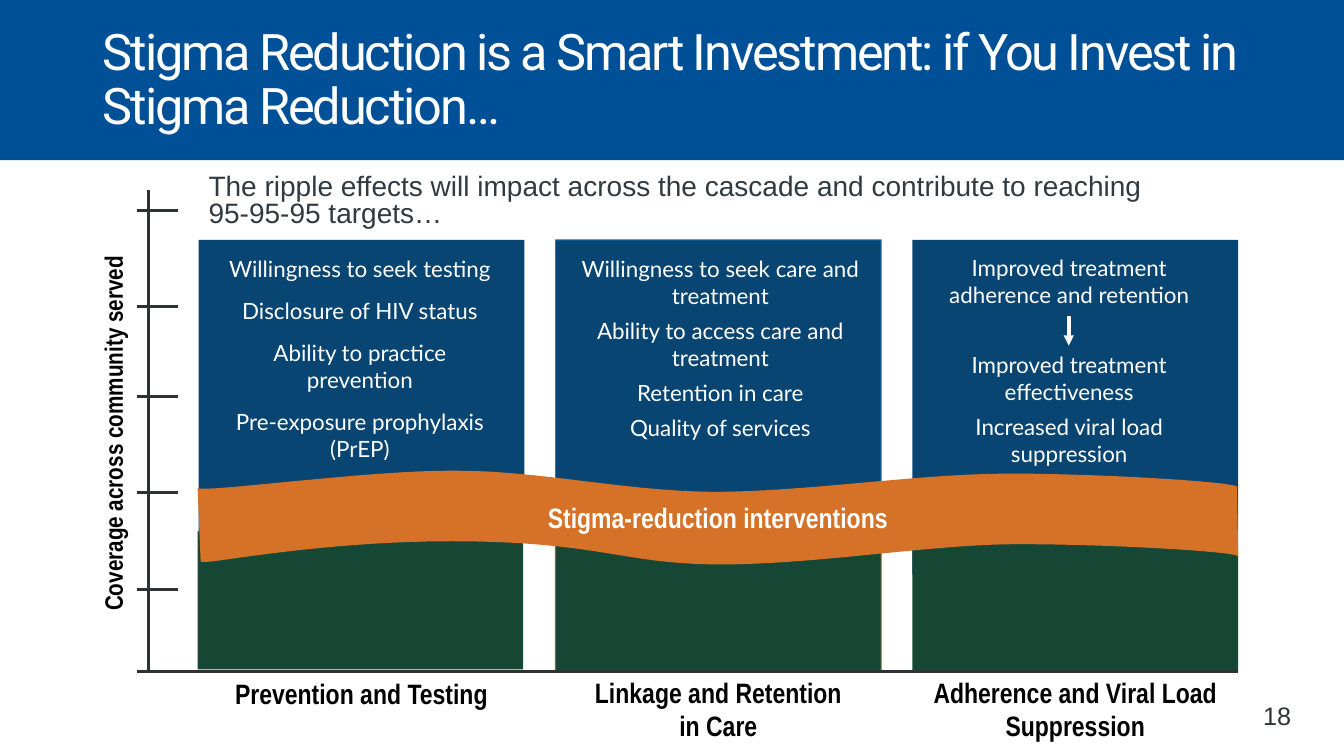
from dataclasses import dataclass

from lxml import etree
from pptx import Presentation
from pptx import util as u
from pptx.dml import color
from pptx.enum import shapes, text
from pptx.oxml import ns

PX = 9144
SLIDE_WIDTH, SLIDE_HEIGHT = 1333, 750
CURVE_STEPS = 16


@dataclass(frozen=True)
class Theme:
    banner: str = "005098"
    ink: str = "2E3235"
    subtitle: str = "313A40"
    outcome: str = "084572"
    outcome_line: str = "0E7DC2"
    base: str = "154734"
    base_line: str = "6D7331"
    wave: str = "D57228"
    white: str = "FFFFFF"
    black: str = "000000"
    heading_size: int = 36
    label_size: int = 20
    axis_size: int = 18
    body_size: int = 16


THEME = Theme()


@dataclass(frozen=True)
class Box:
    left: int
    top: int
    width: int
    height: int

    def emu(self) -> list[int]:
        return [value * PX for value in (self.left, self.top, self.width, self.height)]


@dataclass(frozen=True)
class Style:
    name: str
    size: int
    color: str
    bold: bool = False


@dataclass(frozen=True)
class Stage:
    label: str
    label_box: Box
    outcome_box: Box
    base_box: Box
    text_box: Box
    outcomes: tuple[str, ...]
    space_after: int
    outlined: bool = False


@dataclass(frozen=True)
class Line:
    x1: int
    y1: int
    x2: int
    y2: int
    width: float = 2.25
    color: str = THEME.ink
    arrow: bool = False


LABEL = Style("Arial Narrow", THEME.label_size, THEME.black, True)
BODY = Style("Lato", THEME.body_size, THEME.white)

STAGES = (
    Stage("Prevention and Testing", Box(197, 666, 323, 81), Box(197, 238, 323, 325),
          Box(196, 493, 323, 171), Box(209, 248, 296, 260),
          ("Willingness to seek testing", "Disclosure of HIV status",
           "Ability to practice prevention", "Pre-exposure prophylaxis (PrEP)"), 11),
    Stage("Linkage and Retention\vin Care", Box(551, 665, 323, 77), Box(551, 238, 323, 332),
          Box(551, 504, 323, 162), Box(553, 248, 323, 197),
          ("Willingness to seek care and treatment", "Ability to access care and treatment",
           "Retention in care", "Quality of services"), 6, True),
    Stage("Adherence and Viral Load Suppression", Box(905, 665, 323, 77), Box(905, 238, 323, 332),
          Box(905, 504, 323, 162), Box(917, 247, 287, 313),
          ("Improved treatment adherence and retention", "Improved treatment effectiveness",
           "Increased viral load suppression"), 6),
)
TICKS = (209, 304, 393, 489, 585)
AXIS = [Line(147, 189, 147, 666, 2)] + [Line(136, y, 177, y) for y in TICKS]
BASELINE = Line(136, 666, 1228, 666)
OUTCOME_ARROW = Line(1060, 314, 1060, 343, 2.5, THEME.white, True)
WAVE_TOP = [(196, 484), (196, 490), (367, 466), (452, 467), (537, 467), (617, 487), (707, 488),
            (797, 488), (904, 471), (991, 470), (1078, 469), (1227, 478), (1227, 483)]
WAVE_BOTTOM = [(1228, 552), (1228, 547), (1084, 539), (997, 540), (910, 542), (800, 561), (708, 560),
               (617, 559), (591, 537), (449, 537), (307, 537), (199, 562), (199, 557)]


def rgb(value: str) -> color.RGBColor:
    return color.RGBColor.from_string(value)


def apply(target, values: dict) -> None:
    for name, value in values.items():
        setattr(target, name, value)


def write(shape, lines: tuple[str, ...], style: Style, frame_format: dict, paragraph_format: dict) -> None:
    frame = shape.text_frame
    apply(frame, {"word_wrap": True, "auto_size": text.MSO_AUTO_SIZE.NONE, **frame_format})
    frame.text = "\n".join(lines)
    for paragraph in frame.paragraphs:
        apply(paragraph, paragraph_format)
        for run in paragraph.runs:
            apply(run.font, {"name": style.name, "size": u.Pt(style.size), "bold": style.bold})
            run.font.color.rgb = rgb(style.color)


def add_text(slide, box: Box, lines: tuple[str, ...], style: Style, **paragraph_format):
    shape = slide.shapes.add_textbox(*box.emu())
    write(shape, lines, style, {}, paragraph_format)
    return shape


def paint(shape, fill: str, line: str = "") -> None:
    shape.shadow.inherit = False
    shape.fill.solid()
    shape.fill.fore_color.rgb = rgb(fill)
    if line:
        shape.line.color.rgb = rgb(line)
        shape.line.width = u.Pt(0.75)
    else:
        shape.line.fill.background()


def add_block(slide, kind, box: Box, fill: str, line: str = "", rotation: int = 0):
    shape = slide.shapes.add_shape(kind, *box.emu())
    shape.rotation = rotation
    paint(shape, fill, line)
    return shape


def add_line(slide, line: Line) -> None:
    ends = [value * PX for value in (line.x1, line.y1, line.x2, line.y2)]
    connector = slide.shapes.add_connector(shapes.MSO_CONNECTOR.STRAIGHT, *ends)
    connector.line.color.rgb = rgb(line.color)
    connector.line.width = u.Pt(line.width)
    properties = connector.element.spPr
    if line.arrow:
        etree.SubElement(properties.find(ns.qn("a:ln")), ns.qn("a:tailEnd"), type="triangle")
    etree.SubElement(properties, ns.qn("a:effectLst"))


def sample(points: list[tuple[int, int]]) -> list[tuple[float, float]]:
    result = [(points[0][0] * PX, points[0][1] * PX)]
    for start in range(0, len(points) - 1, 3):
        controls = points[start:start + 4]
        for step in range(1, CURVE_STEPS + 1):
            t = step / CURVE_STEPS
            weights = ((1 - t) ** 3, 3 * t * (1 - t) ** 2, 3 * t * t * (1 - t), t ** 3)
            result.append(tuple(PX * sum(w * point[axis] for w, point in zip(weights, controls))
                                for axis in (0, 1)))
    return result


def add_wave(slide) -> None:
    outline = sample(WAVE_TOP) + sample(WAVE_BOTTOM)
    builder = slide.shapes.build_freeform(*outline[0])
    builder.add_line_segments(outline[1:], close=True)
    wave = builder.convert_to_shape()
    paint(wave, THEME.wave)
    write(wave, ("Stigma-reduction interventions",),
          Style("Arial Narrow", THEME.label_size, THEME.white, True),
          {"word_wrap": False, "vertical_anchor": text.MSO_ANCHOR.MIDDLE},
          {"alignment": text.PP_ALIGN.CENTER})


def add_title(slide) -> None:
    title = slide.shapes.title
    apply(title, dict(zip(("left", "top", "width", "height"), Box(92, 0, 1150, 161).emu())))
    write(title, ("Stigma Reduction is a Smart Investment: if You Invest in Stigma Reduction…",),
          Style("Roboto", THEME.heading_size, THEME.white),
          {"vertical_anchor": text.MSO_ANCHOR.MIDDLE},
          {"alignment": text.PP_ALIGN.LEFT, "line_spacing": 0.9})
    title.text_frame.paragraphs[0].runs[0].font._element.set("spc", "-150")
    banner = add_block(slide, shapes.MSO_SHAPE.RECTANGLE, Box(0, 0, SLIDE_WIDTH, 159), THEME.banner)
    title.element.addprevious(banner.element)


def main() -> None:
    presentation = Presentation()
    apply(presentation, {"slide_width": SLIDE_WIDTH * PX, "slide_height": SLIDE_HEIGHT * PX})
    slide = presentation.slides.add_slide(presentation.slide_layouts[5])
    center = text.PP_ALIGN.CENTER
    manual_input = shapes.MSO_SHAPE.FLOWCHART_MANUAL_INPUT
    add_title(slide)
    for line in AXIS:
        add_line(slide, line)
    for stage in STAGES:
        outlines = (THEME.outcome_line, THEME.base_line) if stage.outlined else ("", "")
        add_block(slide, manual_input, stage.outcome_box, THEME.outcome, outlines[0], 180)
        add_block(slide, manual_input, stage.base_box, THEME.base, outlines[1])
        add_text(slide, stage.label_box, (stage.label,), LABEL, alignment=center)
    add_wave(slide)
    add_line(slide, BASELINE)
    axis_label = add_text(slide, Box(-146, 410, 516, 40), ("Coverage across community served",),
                          Style("Arial Narrow", THEME.axis_size, THEME.black, True), alignment=center)
    axis_label.rotation = 270
    add_text(slide, Box(197, 169, 987, 66),
             ("The ripple effects will impact across the cascade and contribute to reaching 95-95-95 targets…",),
             Style("Arial", THEME.label_size, THEME.subtitle), line_spacing=0.8)
    for stage in STAGES:
        outcomes = add_text(slide, stage.text_box, stage.outcomes, BODY,
                            alignment=center, space_after=u.Pt(stage.space_after))
    outcomes.text_frame.paragraphs[1].space_before = u.Pt(25)
    add_line(slide, OUTCOME_ARROW)
    add_text(slide, Box(1243, 690, 90, 40), ("18",), Style("Arial", THEME.axis_size, THEME.ink))
    presentation.save("out.pptx")


if __name__ == "__main__":
    main()
